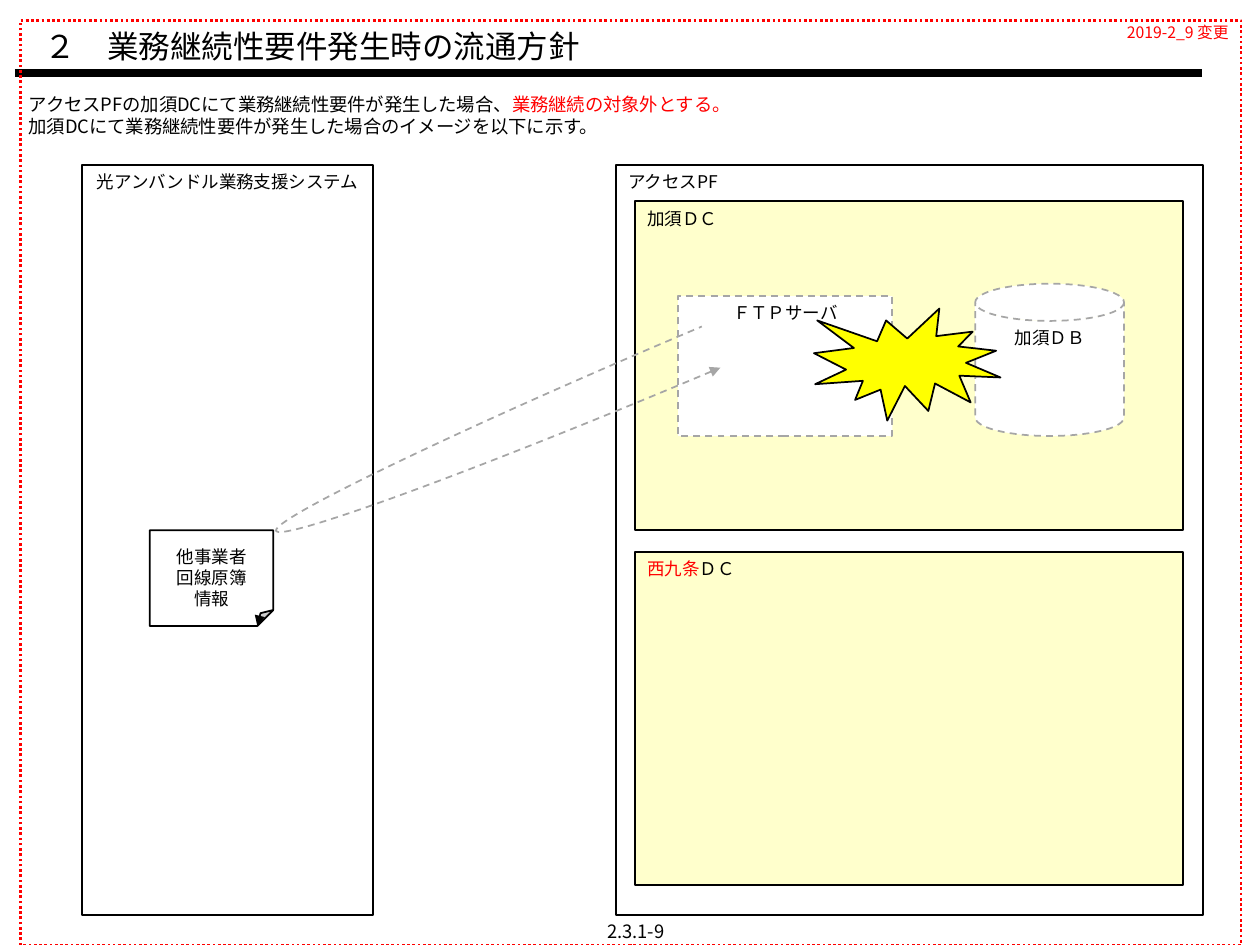
from dataclasses import dataclass

from lxml import etree
from pptx import Presentation
from pptx.dml.color import RGBColor
from pptx.enum import dml, shapes, text
from pptx.oxml import ns
from pptx.util import Cm, Pt

SHAPE, DASH = shapes.MSO_SHAPE, dml.MSO_LINE
ALIGN, ANCHOR = text.PP_ALIGN, text.MSO_ANCHOR


@dataclass(frozen=True)
class Theme:
    """Hold the colours, font and type sizes of the slide."""
    font: str = "Noto Sans CJK JP"
    ink: str = "000000"
    paper: str = "FFFFFF"
    changed: str = "FF0000"
    centre: str = "FFFFCC"
    failure: str = "FFFF00"
    stopped: str = "A6A6A6"
    title: float = 18
    body: float = 10.5
    label: float = 10
    revision: float = 9
    leading: float = 1.2


THEME = Theme()


@dataclass(frozen=True)
class Box:
    """Describe a rectangle in centimetres."""
    left: float
    top: float
    width: float
    height: float

    def inner(self, left, top, width, height):
        """Return a box offset from this one's corner."""
        return Box(self.left + left, self.top + top, width, height)

    def lengths(self):
        """Return the position and size as slide lengths."""
        return [Cm(v) for v in (self.left, self.top, self.width, self.height)]


def add_child(parent, tag, **attributes):
    """Append a DrawingML element."""
    return etree.SubElement(parent, ns.qn(tag), **attributes)


def write(frame, lines, size, align=ALIGN.LEFT, anchor=ANCHOR.TOP, wrap=True):
    """Write lines, each a list of (wording, colour) pairs."""
    frame.auto_size = text.MSO_AUTO_SIZE.NONE
    frame.word_wrap, frame.vertical_anchor = wrap, anchor
    frame.text = "\n".join("" for _ in lines)
    for paragraph, pieces in zip(frame.paragraphs, lines):
        paragraph.alignment = align
        paragraph.line_spacing = Pt(size * THEME.leading)
        paragraph.space_before = paragraph.space_after = Pt(0)
        for wording, colour in pieces:
            run = paragraph.add_run()
            run.text = wording
            run.font.size, run.font.name = Pt(size), THEME.font
            run.font.color.rgb = RGBColor.from_string(colour)
            add_child(run.font._element, "a:ea", typeface=THEME.font)


def add_figure(slide, kind, box, fill=None, line=THEME.ink, weight=1, dash=None):
    """Add a preset shape with a plain fill and outline."""
    figure = slide.shapes.add_shape(kind, *box.lengths())
    figure.shadow.inherit = False
    if fill:
        figure.fill.solid()
        figure.fill.fore_color.rgb = RGBColor.from_string(fill)
    else:
        figure.fill.background()
    figure.line.color.rgb = RGBColor.from_string(line)
    figure.line.width = Pt(weight)
    if dash:
        figure.line.dash_style = dash
    return figure


def add_panel(slide, box, pieces, fill=THEME.paper, align=ALIGN.LEFT, **outline):
    """Add a rectangle labelled at its top."""
    panel = add_figure(slide, SHAPE.RECTANGLE, box, fill, **outline)
    write(panel.text_frame, [pieces], THEME.label, align, wrap=False)


def add_start_arrow(figure):
    """Put an arrowhead at the start of an outline."""
    add_child(figure.line._get_or_add_ln(), "a:headEnd", type="triangle")


def add_caption(slide, box, wording, size, colour, align):
    """Add a line of free text."""
    caption = slide.shapes.add_textbox(*box.lengths())
    write(caption.text_frame, [[(wording, colour)]], size, align)


def place(holder, box):
    """Move a placeholder to a box."""
    holder.left, holder.top, holder.width, holder.height = box.lengths()


def heading(slide, box):
    """Set the title and the rule below it."""
    title = slide.shapes.title
    place(title, box)
    write(title.text_frame, [[("２　業務継続性要件発生時の流通方針", THEME.ink)]], THEME.title)
    left, level = box.left - 0.34, Cm(box.top + 1.06)
    rule = slide.shapes.add_connector(
        shapes.MSO_CONNECTOR.STRAIGHT, Cm(left), level, Cm(left + 23.93), level)
    rule.line.color.rgb = RGBColor.from_string(THEME.ink)
    rule.line.width = Pt(4.5)
    add_child(rule._element.spPr, "a:effectLst")


def policy(slide, box):
    """Set the policy statement in the body placeholder."""
    statement = slide.placeholders[1]
    place(statement, box)
    frame = statement.text_frame
    write(frame, [
        [("アクセスPFの加須DCにて業務継続性要件が発生した場合、", THEME.ink),
         ("業務継続の対象外とする。", THEME.changed)],
        [("加須DCにて業務継続性要件が発生した場合のイメージを以下に示す。", THEME.ink)],
    ], THEME.body)
    frame.margin_left = frame.margin_right = Cm(0.15)
    for paragraph in frame.paragraphs:
        properties = paragraph._p.get_or_add_pPr()
        properties.set("marL", str(Cm(2.24)))
        properties.set("indent", str(-Cm(2.24)))
        add_child(properties, "a:buNone")


def support_system(slide, box):
    """Draw the support system and its ledger."""
    add_panel(slide, box, [("光アンバンドル業務支援システム", THEME.ink)], align=ALIGN.CENTER)
    ledger = add_figure(slide, SHAPE.FOLDED_CORNER, box.inner(1.37, 7.36, 2.49, 1.93), THEME.paper)
    add_start_arrow(ledger)
    ledger.text_frame.margin_top = Cm(0.41)
    write(ledger.text_frame,
          [[(line, THEME.ink)] for line in ("他事業者", "回線原簿", "情報")],
          THEME.label, ALIGN.CENTER, ANCHOR.MIDDLE)


def failed_centre(slide, box):
    """Draw the data centre whose server and database are down."""
    stopped = dict(line=THEME.stopped, dash=DASH.DASH)
    add_panel(slide, box, [("加須ＤＣ", THEME.ink)], THEME.centre)
    add_panel(slide, box.inner(0.87, 1.91, 4.32, 2.82), [("ＦＴＰサーバ", THEME.ink)],
              align=ALIGN.CENTER, **stopped)
    database = add_figure(slide, SHAPE.CAN, box.inner(6.86, 1.66, 3, 3.07), THEME.paper, **stopped)
    write(database.text_frame, [[("加須ＤＢ", THEME.ink)]], THEME.label, ALIGN.CENTER)
    add_figure(slide, SHAPE.EXPLOSION1, box.inner(3.61, 2.16, 3.76, 2.26), THEME.failure)


def access_platform(slide, box):
    """Draw the platform with its two data centres."""
    add_panel(slide, box, [("アクセスPF", THEME.ink)])
    failed_centre(slide, box.inner(0.38, 0.73, 11.05, 6.63))
    add_panel(slide, box.inner(0.38, 7.8, 11.05, 6.71),
              [("西九条", THEME.changed), ("ＤＣ", THEME.ink)], THEME.centre)


def transfer(slide, box):
    """Draw the stopped transfer between ledger and server."""
    route = add_figure(slide, SHAPE.ARC, box, line=THEME.stopped, dash=DASH.DASH)
    route.rotation = 247.1
    route.adjustments[0], route.adjustments[1] = 106.39, 0
    add_start_arrow(route)


def revision(slide, box):
    """Draw the change frame and its date."""
    add_figure(slide, SHAPE.RECTANGLE, box, line=THEME.changed, weight=1.5, dash=DASH.ROUND_DOT)
    add_caption(slide, box.inner(box.width - 4.19, -0.08, 4.19, 0.76),
                "2019-2_9 変更", THEME.revision, THEME.changed, ALIGN.RIGHT)


def main():
    """Build and save the slide."""
    deck = Presentation()
    deck.slide_width, deck.slide_height = Cm(25.4), Cm(19.05)
    slide = deck.slides.add_slide(deck.slide_layouts[1])
    heading(slide, Box(0.64, 0.41, 24.77, 1.45))
    policy(slide, Box(0.43, 1.75, 23.62, 1.6))
    support_system(slide, Box(1.65, 3.33, 5.87, 15.11))
    access_platform(slide, Box(12.42, 3.33, 11.84, 15.11))
    transfer(slide, Box(13.87, -2.51, 0.91, 19.02))
    revision(slide, Box(0.41, 0.41, 24.61, 18.64))
    add_caption(slide, Box(9.96, 18.42, 5.72, 0.64), "2.3.1-9", THEME.body, THEME.ink, ALIGN.CENTER)
    deck.save("out.pptx")


if __name__ == "__main__":
    main()
